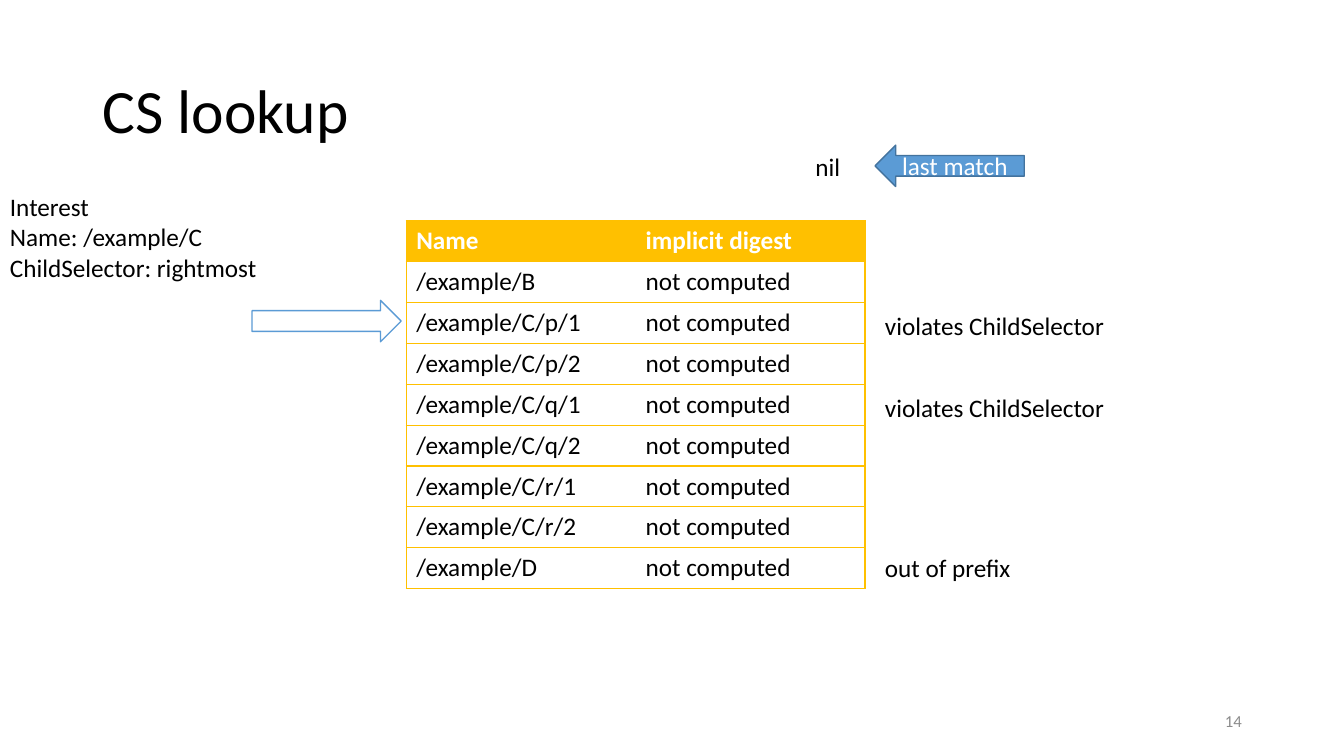
from lxml.etree import SubElement
from pptx import Presentation
from pptx.dml.color import RGBColor
from pptx.enum.shapes import MSO_SHAPE
from pptx.enum.text import MSO_ANCHOR, MSO_AUTO_SIZE, PP_ALIGN
from pptx.oxml.ns import qn
from pptx.util import Inches, Pt

SLIDE_WIDTH, SLIDE_HEIGHT = Inches(13.333), Inches(7.5)
COLUMN, ROW = SLIDE_WIDTH / 100, SLIDE_HEIGHT / 100
ARROW_WIDTH, ARROW_HEIGHT = 11.1, 5.47
LABEL_HEIGHT = 5.33
BLACK, WHITE, GOLD, BLUE, DARK_BLUE, GREY = "000000", "FFFFFF", "FFC000", "5B9BD5", "43739E", "8C8C8C"
NAMES = [f"/example/{name}" for name in
         ("B", "C/p/1", "C/p/2", "C/q/1", "C/q/2", "C/r/1", "C/r/2", "D")]
ENTRIES = [("Name", "implicit digest")] + [(name, "not computed") for name in NAMES]
VERDICTS = [(2, 0.4, 29.3, "violates ChildSelector"),
            (4, 0.4, 29.3, "violates ChildSelector"),
            (8, 0, 10.95 + 6.87 - 6.87, "out of prefix")]
VERDICTS[2] = (8, 0, 10.95, "out of prefix")
VERDICTS = [(row, shift, 18 if row < 8 else width, text) for row, shift, width, text in VERDICTS]


def color(value):
    return RGBColor.from_string(value)


def place(box):
    left, top, width, height = box
    return [round(length) for length in (left * COLUMN, top * ROW, width * COLUMN, height * ROW)]


def write(frame, text, ink=BLACK, size=18, bold=False, align=PP_ALIGN.LEFT, spacing=1.0):
    frame.text = text
    for paragraph in frame.paragraphs:
        paragraph.alignment = align
        paragraph.line_spacing = spacing
        paragraph.font.color.rgb = color(ink)
        for name, value in {"name": "Calibri", "size": Pt(size), "bold": bold}.items():
            setattr(paragraph.font, name, value)


def add_text(slide, box, text, wrap=False, anchor=MSO_ANCHOR.TOP, **style):
    frame = slide.shapes.add_textbox(*place(box)).text_frame
    write(frame, text, **style)
    fit = MSO_AUTO_SIZE.NONE if wrap else MSO_AUTO_SIZE.SHAPE_TO_FIT_TEXT
    for name, value in {"word_wrap": wrap, "vertical_anchor": anchor, "auto_size": fit}.items():
        setattr(frame, name, value)


def add_arrow(slide, left, top, fill, line):
    arrow = slide.shapes.add_shape(MSO_SHAPE.RIGHT_ARROW, *place((left, top, ARROW_WIDTH, ARROW_HEIGHT)))
    arrow.shadow.inherit = False
    arrow.fill.solid()
    arrow.fill.fore_color.rgb = color(fill)
    arrow.line.color.rgb = color(line)
    arrow.line.width = Pt(1)
    return arrow


def set_borders(cell, visible_sides):
    properties = cell._tc.get_or_add_tcPr()
    for index, side in enumerate("LRTB"):
        line = SubElement(properties, qn(f"a:ln{side}"), w=str(Pt(1)))
        if side in visible_sides:
            fill = SubElement(line, qn("a:solidFill"))
            SubElement(fill, qn("a:srgbClr"), val=GOLD)
        else:
            SubElement(line, qn("a:noFill"))
        properties.insert(index, line)


def add_store(slide, box):
    table = slide.shapes.add_table(len(ENTRIES), 2, *place(box)).table
    table.horz_banding = False
    for row, entry in enumerate(ENTRIES):
        header = row == 0
        for column, text in enumerate(entry):
            cell = table.cell(row, column)
            cell.fill.solid()
            cell.fill.fore_color.rgb = color(GOLD if header else WHITE)
            write(cell.text_frame, text, ink=WHITE if header else BLACK, bold=header)
            set_borders(cell, "LTB" if column == 0 else "RTB")


def add_verdicts(slide, box):
    left, top, width, height = box
    row_height = height / len(ENTRIES)
    for row, shift, label_width, text in VERDICTS:
        label_box = (left + width + 0.75, top + row * row_height + shift, label_width, LABEL_HEIGHT)
        add_text(slide, label_box, text)


def add_interest(slide, box, store_box):
    add_text(slide, box, "Interest\nName: /example/C\nChildSelector: rightmost")
    left, top, width, height = store_box
    row_top = top + 2 * height / len(ENTRIES)
    add_arrow(slide, left - ARROW_WIDTH - 0.38, row_top - 0.28, WHITE, BLUE)


def add_last_match(slide, box):
    left, top, width, height = box
    add_text(slide, (left, top + 0.13, 3.38, LABEL_HEIGHT), "nil")
    arrow = add_arrow(slide, left + width - ARROW_WIDTH, top, BLUE, DARK_BLUE)
    arrow.element.spPr.get_or_add_xfrm().set("flipH", "1")
    write(arrow.text_frame, "last match", ink=WHITE, align=PP_ALIGN.CENTER)
    arrow.text_frame.vertical_anchor = MSO_ANCHOR.MIDDLE


def build_lookup_slide(presentation):
    slide = presentation.slides.add_slide(presentation.slide_layouts[6])
    store_box = (30.23, 29.2, 34.13, 48.67)
    add_text(slide, (6.9, 5.33, 86.25, 19.33), "CS lookup", wrap=True,
             anchor=MSO_ANCHOR.MIDDLE, size=44, spacing=0.9)
    add_interest(slide, (0, 24.67, 20.03, 13.47), store_box)
    add_store(slide, store_box)
    add_verdicts(slide, store_box)
    add_last_match(slide, (59.93, 19.2, 16.28, ARROW_HEIGHT))
    add_text(slide, (70.65, 92.67, 22.5, LABEL_HEIGHT), "14", wrap=True,
             anchor=MSO_ANCHOR.MIDDLE, ink=GREY, size=12, align=PP_ALIGN.RIGHT)


def main():
    presentation = Presentation()
    for name, value in {"slide_width": SLIDE_WIDTH, "slide_height": SLIDE_HEIGHT}.items():
        setattr(presentation, name, value)
    build_lookup_slide(presentation)
    presentation.save("out.pptx")


if __name__ == "__main__":
    main()
